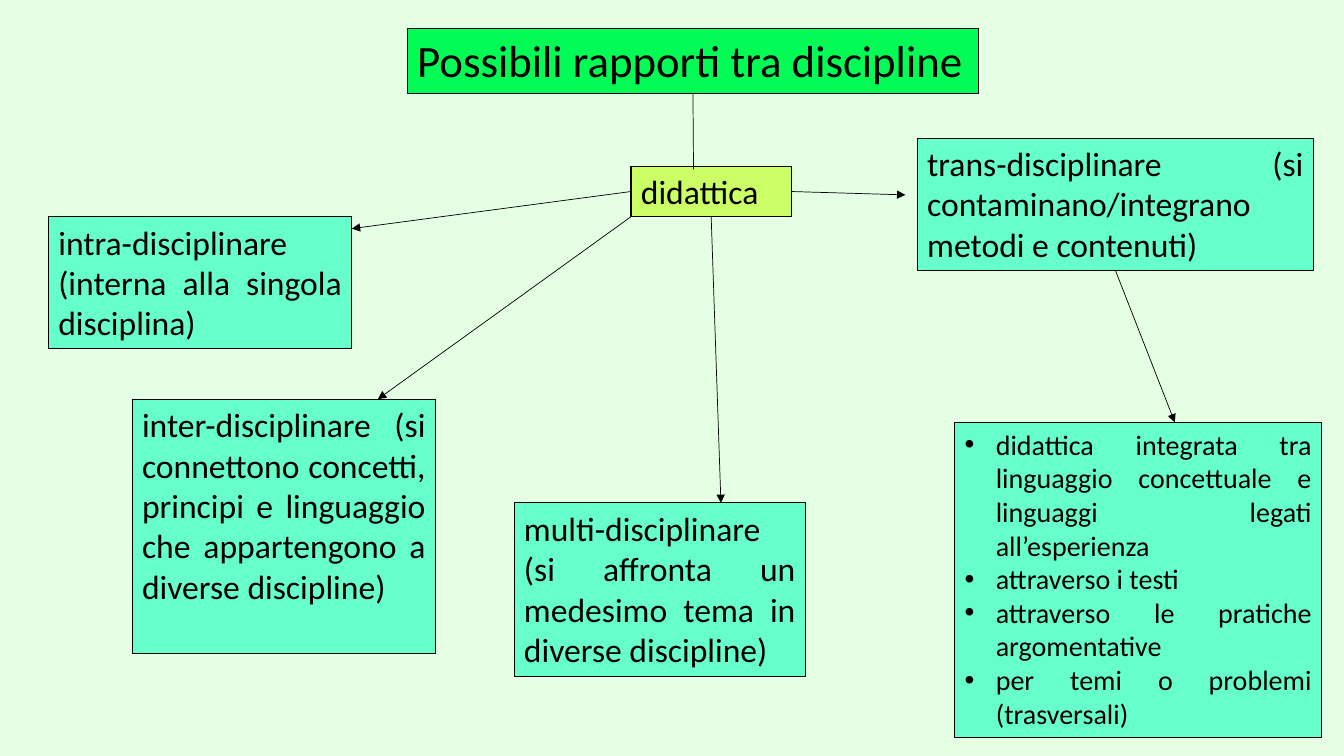
from lxml import etree
from pptx import Presentation
from pptx.dml.color import RGBColor
from pptx.enum.shapes import MSO_CONNECTOR, MSO_SHAPE
from pptx.enum.text import MSO_ANCHOR, PP_ALIGN
from pptx.oxml.ns import qn
from pptx.util import Inches, Pt

RECTANGLE = MSO_SHAPE.RECTANGLE
STRAIGHT = MSO_CONNECTOR.STRAIGHT
TOP = MSO_ANCHOR.TOP
LEFT, JUSTIFY = PP_ALIGN.LEFT, PP_ALIGN.JUSTIFY

WIDTH, HEIGHT = Inches(13.33), Inches(7.5)
COLUMN, ROW = WIDTH / 100, HEIGHT / 100
BULLET_INDENT = Inches(0.31)

BACKGROUND, BLACK = "E4FFE4", "000000"
GREEN, LIME, AQUA = "03FB56", "CCFF66", "66FFCC"

# box: left and width in columns, top and height in rows
BOXES = {
    "title": (30.3, 3.73, 42.52, 8.6),
    "teaching": (46.95, 22, 11.93, 6.67),
    "intra": (3.6, 28.67, 22.58, 17.47),
    "inter": (9.83, 52.8, 22.58, 33.6),
    "multi": (38.25, 66.53, 21.68, 22.93),
    "trans": (68.25, 18.27, 29.48, 17.47),
    "practices": (71.03, 55.87, 27.3, 41.73),
}

KINDS = {
    "intra": "intra-disciplinare (interna alla singola disciplina)",
    "inter": "inter-disciplinare (si connettono concetti, principi e linguaggio "
             "che appartengono a diverse discipline)",
    "multi": "multi-disciplinare (si affronta un medesimo tema in diverse discipline)",
    "trans": "trans-disciplinare (si contaminano/integrano metodi e contenuti)",
}

PRACTICES = [
    "didattica integrata tra linguaggio concettuale e linguaggi legati all’esperienza",
    "attraverso i testi",
    "attraverso le pratiche argomentative",
    "per temi o problemi (trasversali)",
]

LINKS = [
    ("title", (0.5, 1), "teaching", (0.39, 0.06), False),
    ("teaching", (0, 0.5), "intra", (1, 0.09), True),
    ("teaching", (0, 1), "inter", (0.81, 0), True),
    ("teaching", (0.5, 1), "multi", (0.71, 0), True),
    ("teaching", (1, 0.5), "trans", (-0.03, 0.43), True),
    ("trans", (0.5, 1), "practices", (0.6, 0), True),
]


def color(value):
    return RGBColor.from_string(value)


def point(box, across, down):
    left, top, width, height = box
    return round((left + width * across) * COLUMN), round((top + height * down) * ROW)


def add_bullet(paragraph):
    properties = paragraph._p.get_or_add_pPr()
    properties.set("marL", str(BULLET_INDENT))
    properties.set("indent", str(-BULLET_INDENT))
    etree.SubElement(properties, qn("a:buFont")).set("typeface", "Arial")
    etree.SubElement(properties, qn("a:buChar")).set("char", "•")


def write_text(paragraph, text, size=24, align=LEFT, bullet=False):
    paragraph.alignment = align
    if bullet:
        add_bullet(paragraph)
    run = paragraph.add_run()
    run.text = text
    run.font.name = "Calibri"
    run.font.size = Pt(size)
    run.font.color.rgb = color(BLACK)


def add_box(slide, box, texts, fill=AQUA, **text_format):
    left, top = point(box, 0, 0)
    right, bottom = point(box, 1, 1)
    shape = slide.shapes.add_shape(RECTANGLE, left, top, right - left, bottom - top)
    shape.shadow.inherit = False
    shape.fill.solid()
    shape.fill.fore_color.rgb = color(fill)
    shape.line.color.rgb = color(BLACK)
    shape.line.width = Pt(0.75)
    frame = shape.text_frame
    frame.word_wrap = True
    frame.vertical_anchor = TOP
    for index, text in enumerate(texts):
        paragraph = frame.add_paragraph() if index else frame.paragraphs[0]
        write_text(paragraph, text, **text_format)


def add_link(slide, start, end, arrow):
    connector = slide.shapes.add_connector(STRAIGHT, *start, *end)
    connector.line.color.rgb = color(BLACK)
    connector.line.width = Pt(0.5)
    if arrow:
        line = connector.line._get_or_add_ln()
        etree.SubElement(line, qn("a:tailEnd")).set("type", "triangle")
    etree.SubElement(connector._element.spPr, qn("a:effectLst"))


def add_concept_map(slide, boxes):
    add_box(slide, boxes["title"], ["Possibili rapporti tra discipline"], fill=GREEN, size=32)
    add_box(slide, boxes["teaching"], ["didattica"], fill=LIME)
    for name, text in KINDS.items():
        add_box(slide, boxes[name], [text], align=JUSTIFY)
    add_box(slide, boxes["practices"], PRACTICES, size=20, align=JUSTIFY, bullet=True)
    for source, leave, target, reach, arrow in LINKS:
        add_link(slide, point(boxes[source], *leave), point(boxes[target], *reach), arrow)


def main():
    presentation = Presentation()
    presentation.slide_width, presentation.slide_height = WIDTH, HEIGHT
    slide = presentation.slides.add_slide(presentation.slide_layouts[6])
    slide.background.fill.solid()
    slide.background.fill.fore_color.rgb = color(BACKGROUND)
    add_concept_map(slide, BOXES)
    presentation.save("out.pptx")


if __name__ == "__main__":
    main()
